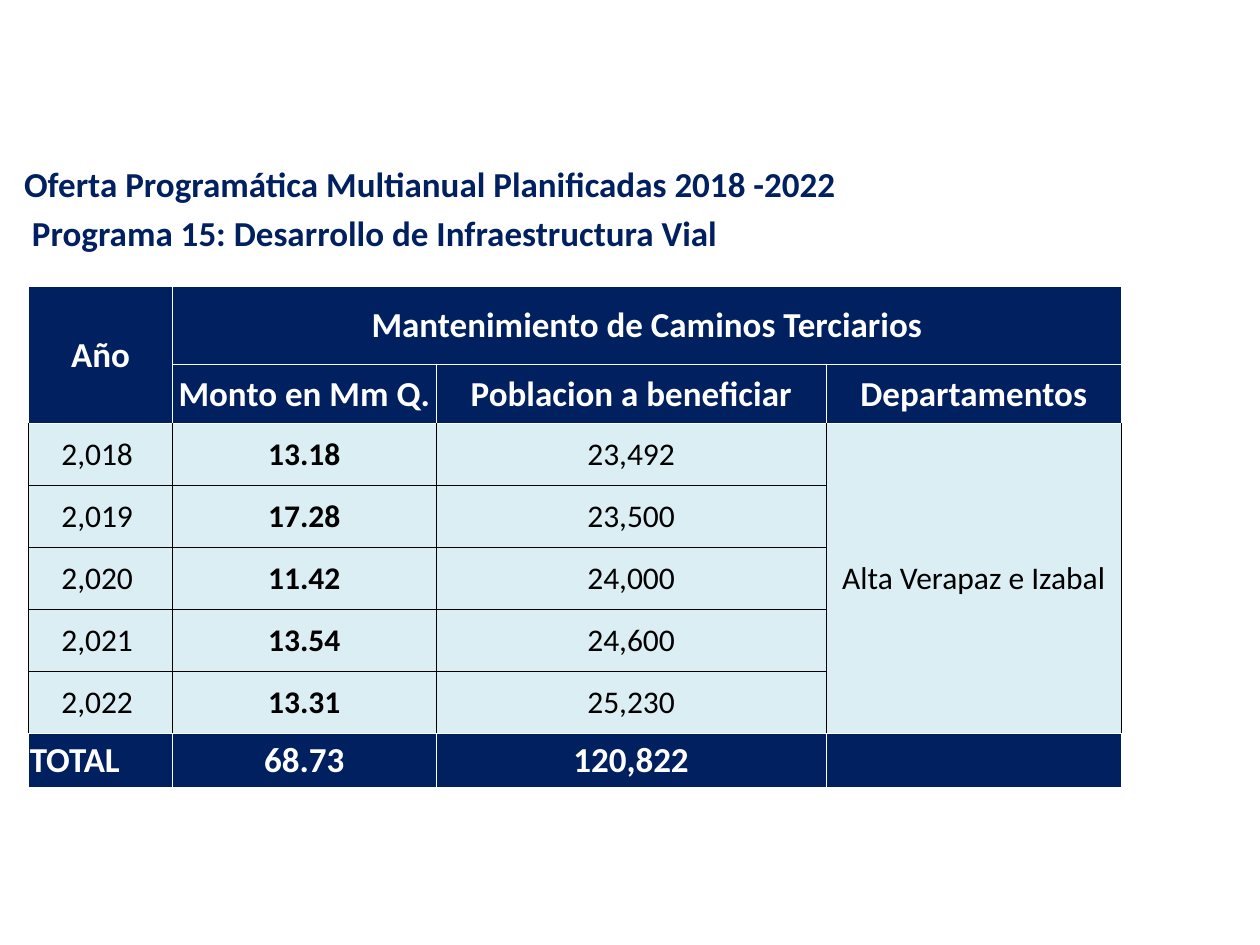
from lxml.etree import SubElement
from pptx import Presentation
from pptx.dml.color import RGBColor
from pptx.enum.text import MSO_ANCHOR as Anchor, MSO_AUTO_SIZE as AutoSize, PP_ALIGN as Align
from pptx.oxml.ns import qn
from pptx.util import Cm, Pt

NAVY, PALE, WHITE, BLACK = "002060", "DBEEF3", "FFFFFF", "000000"

HEADING = [
    "Oferta Programática Multianual Planificadas 2018 -2022",
    " Programa 15: Desarrollo de Infraestructura Vial",
]
ROWS = [
    ["Año", "Mantenimiento de Caminos Terciarios", "", ""],
    ["", "Monto en Mm Q.", "Poblacion a beneficiar", "Departamentos"],
    ["2,018 ", "13.18", "23,492", "Alta Verapaz e Izabal"],
    ["2,019 ", "17.28", "23,500", ""],
    ["2,020 ", "11.42", "24,000", ""],
    ["2,021 ", "13.54", "24,600", ""],
    ["2,022 ", "13.31", "25,230", ""],
    ["TOTAL", "68.73", "120,822", ""],
]
COLUMN_WIDTHS = [2.9, 5.31, 7.87, 5.94]
ROW_HEIGHTS = [1.57, 1.2] + [1.25] * 5 + [1.08]
MERGES = [((0, 0), (1, 0)), ((0, 1), (0, 3)), ((2, 3), (6, 3))]
FIRST_YEAR, LAST_YEAR = 2, 6
AMOUNT, DEPARTMENTS = 1, 3


def color(hex_string):
    return RGBColor.from_string(hex_string)


class SlideBuilder:
    font_name = "Calibri"

    def __init__(self, presentation):
        self.slide = presentation.slides.add_slide(presentation.slide_layouts[5])

    def format_paragraph(self, paragraph, size, hex_color, bold, align):
        paragraph.alignment = align
        font = paragraph.font
        font.name, font.size, font.bold = self.font_name, Pt(size), bold
        font.color.rgb = color(hex_color)

    def heading(self, lines, left, top, width, height):
        title = self.slide.shapes.title
        title.left, title.top = Cm(left), Cm(top)
        title.width, title.height = Cm(width), Cm(height)
        frame = title.text_frame
        frame.text = "\n".join(lines)
        frame.word_wrap = True
        frame.auto_size = AutoSize.NONE
        frame.vertical_anchor = Anchor.TOP
        for index, paragraph in enumerate(frame.paragraphs):
            paragraph.space_before = Pt(4 if index else 0)
            self.format_paragraph(paragraph, 20, NAVY, True, Align.LEFT)

    def borders(self, cell, left, right, top, bottom):
        properties = cell._tc.get_or_add_tcPr()
        for side, hex_color in zip("LRTB", (left, right, top, bottom)):
            line = SubElement(properties, qn(f"a:ln{side}"), w=str(Pt(0.5)))
            fill = SubElement(line, qn("a:solidFill"))
            SubElement(fill, qn("a:srgbClr"), val=hex_color)

    def cell(self, cell, text, row, column):
        is_year = FIRST_YEAR <= row <= LAST_YEAR
        # Borders: black inside the yearly block, white against the navy rows
        side = BLACK if is_year else WHITE
        top = WHITE if row == FIRST_YEAR else side
        ends_block = row == LAST_YEAR or (row == FIRST_YEAR and column == DEPARTMENTS)
        self.borders(cell, side, side, top, WHITE if ends_block else side)
        cell.fill.solid()
        cell.fill.fore_color.rgb = color(PALE if is_year else NAVY)
        # Text
        cell.margin_left = cell.margin_right = cell.margin_top = Cm(0.02)
        cell.margin_bottom = 0
        cell.vertical_anchor = Anchor.MIDDLE
        cell.text = text
        self.format_paragraph(
            cell.text_frame.paragraphs[0],
            18 if is_year else 20,
            BLACK if is_year else WHITE,
            not is_year or column == AMOUNT,
            Align.LEFT if text == "TOTAL" else Align.CENTER,
        )

    def table(self, rows, left, top):
        table = self.slide.shapes.add_table(
            len(rows), len(COLUMN_WIDTHS), Cm(left), Cm(top),
            Cm(sum(COLUMN_WIDTHS)), Cm(sum(ROW_HEIGHTS)),
        ).table
        table.first_row = table.horz_banding = False
        for column, width in zip(table.columns, COLUMN_WIDTHS):
            column.width = Cm(width)
        for row, height in zip(table.rows, ROW_HEIGHTS):
            row.height = Cm(height)
        for row, texts in enumerate(rows):
            for column, text in enumerate(texts):
                self.cell(table.cell(row, column), text, row, column)
        for start, end in MERGES:
            table.cell(*start).merge(table.cell(*end))


def main():
    presentation = Presentation()
    presentation.slide_width, presentation.slide_height = Cm(25.4), Cm(19.05)
    builder = SlideBuilder(presentation)
    builder.heading(HEADING, 0.23, 3.15, 21.41, 1.8)
    builder.table(ROWS, 0.58, 5.77)
    presentation.save("out.pptx")


if __name__ == "__main__":
    main()
